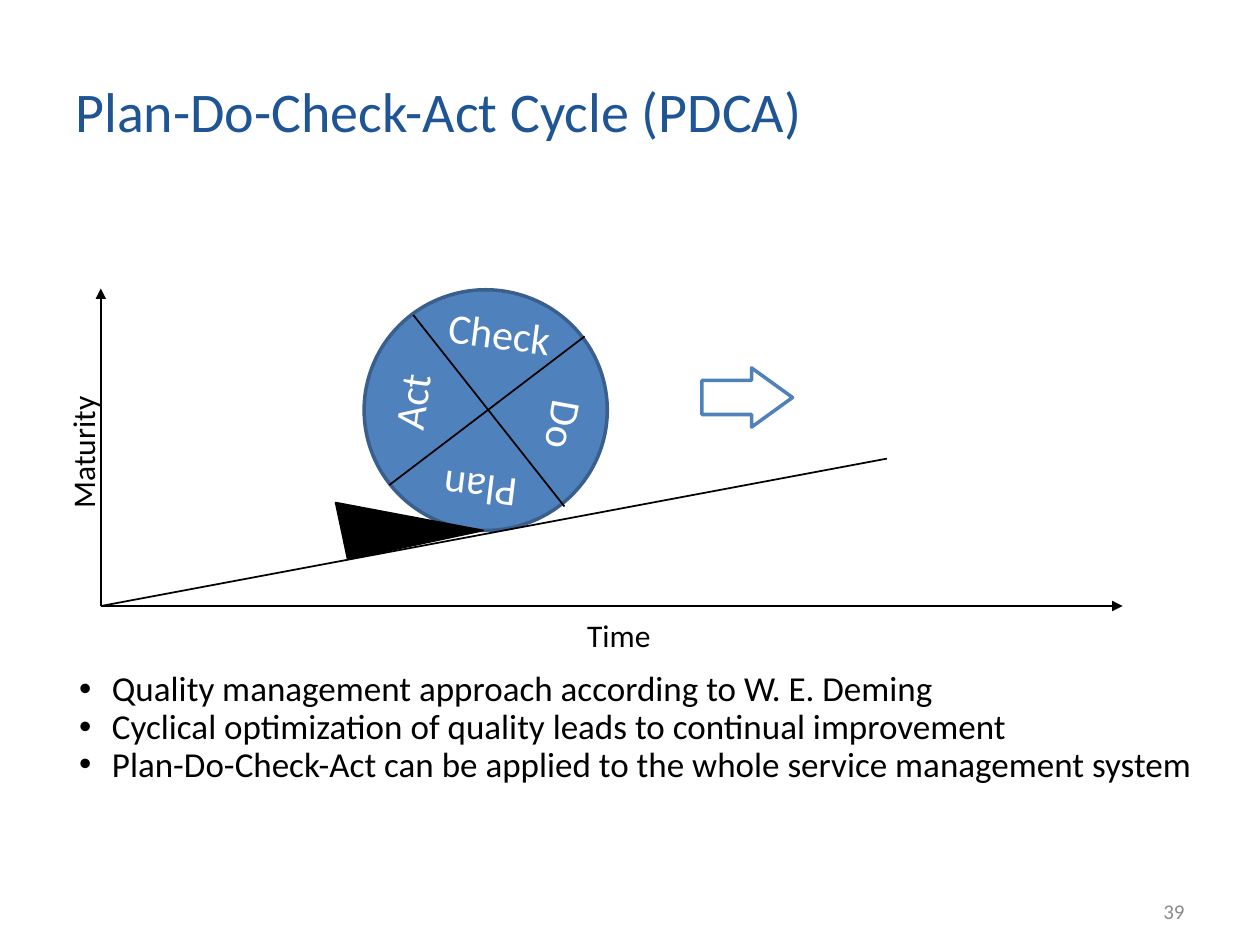
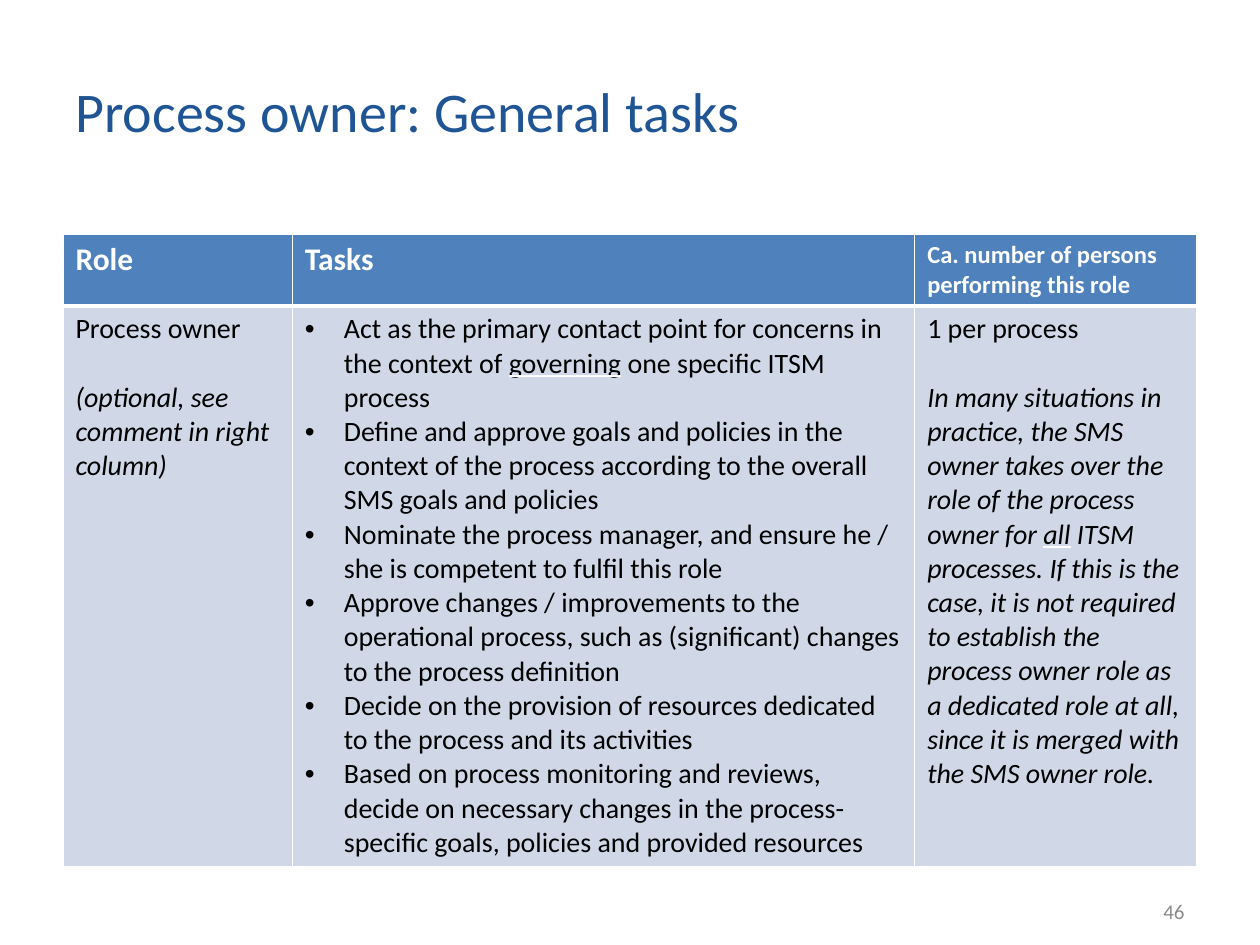
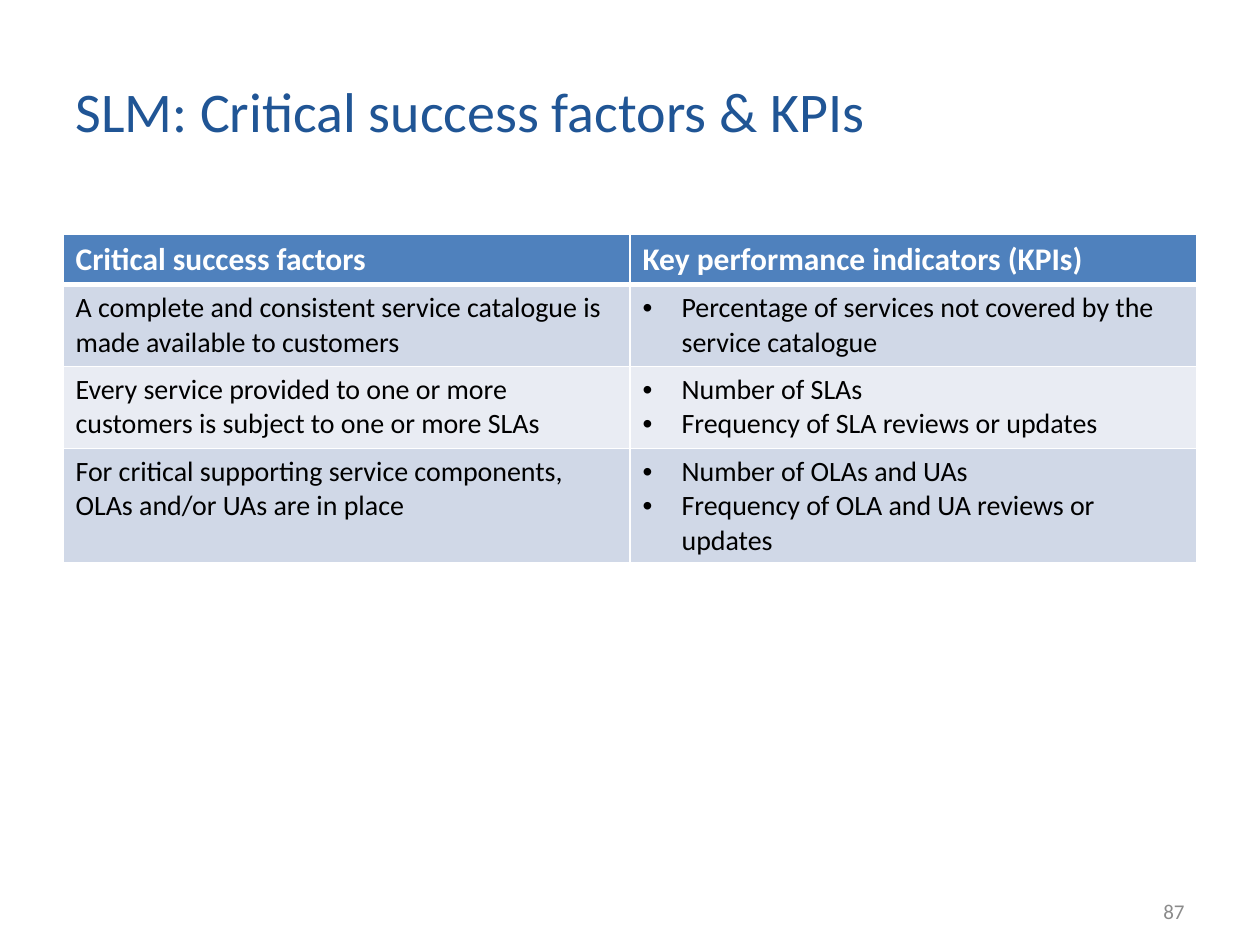
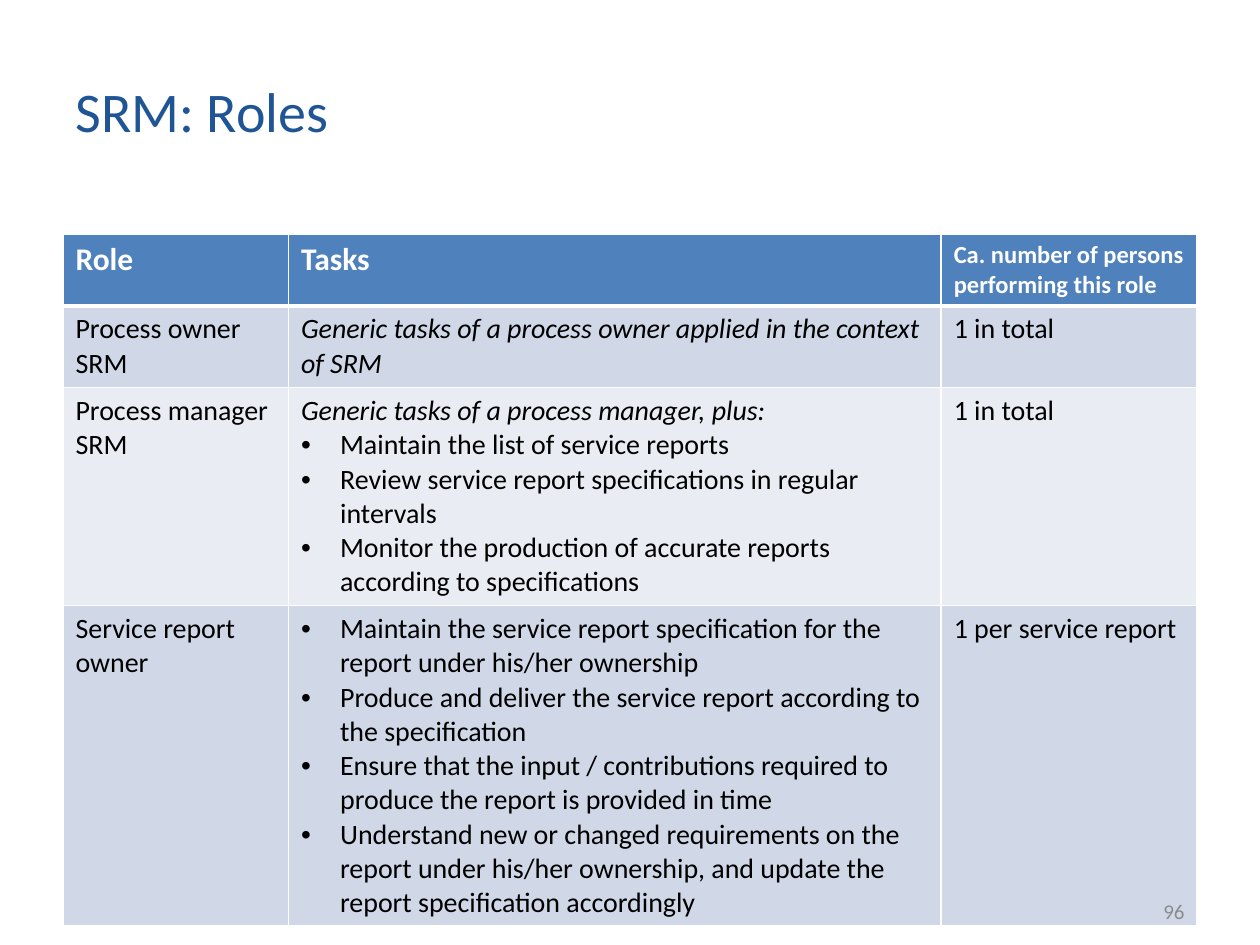
from dataclasses import dataclass

from lxml.etree import SubElement
from pptx import Presentation
from pptx.dml.color import RGBColor
from pptx.enum.shapes import MSO_CONNECTOR, MSO_SHAPE
from pptx.enum.text import MSO_ANCHOR, PP_ALIGN
from pptx.oxml import parse_xml
from pptx.oxml.ns import nsdecls, qn
from pptx.util import Inches, Pt

FONT = "Calibri"
TITLE_BLUE = RGBColor(0x20, 0x55, 0x95)
ACCENT = RGBColor(0x4F, 0x81, 0xBD)
WHEEL_EDGE = RGBColor(0x3A, 0x5F, 0x8C)
BAND_DARK = RGBColor(0xD0, 0xD8, 0xE7)
BAND_LIGHT = RGBColor(0xE9, 0xEC, 0xF3)
NUMBER_GREY = RGBColor(0x8B, 0x8B, 0x8B)
BLACK = RGBColor(0, 0, 0)
WHITE = RGBColor(255, 255, 255)

TITLE_BOX = (0.5, 0.3, 8.04, 1.15)
NUMBER_BOX = (7.17, 7.03, 2.33, 0.4)
TABLE_LEFT, TABLE_TOP = 0.5, 1.86
ROLE_HEADER = [("Role", 18), ("Tasks", 18), ("Ca. number of persons performing this role", 14)]


@dataclass
class Item:
    text: str
    bullet: bool = False
    italic: bool = False
    underlined: str = ""
    gap: float = 0


def bullets(*texts):
    return [Item(text, bullet=True) for text in texts]


def box(*lengths):
    return [Inches(length) for length in lengths]


def style(run, size, color, bold=False, italic=False):
    run.font.name = FONT
    run.font.size = Pt(size)
    run.font.color.rgb = color
    run.font.bold = bold
    run.font.italic = italic


def underline_white(run):
    run.font.underline = True
    line_fill = parse_xml(
        f'<a:uFill {nsdecls("a")}><a:solidFill><a:srgbClr val="{WHITE}"/></a:solidFill></a:uFill>'
    )
    run.font._element.find(qn("a:latin")).addprevious(line_fill)


def indent(paragraph, margin, hanging=0):
    properties = paragraph._p.get_or_add_pPr()
    properties.set("marL", str(Inches(margin)))
    properties.set("indent", str(-Inches(hanging)))
    return properties


def add_bullet(paragraph, margin, hanging):
    properties = indent(paragraph, margin, hanging)
    color = SubElement(properties, qn("a:buClr"))
    SubElement(color, qn("a:srgbClr"), val=str(BLACK))
    SubElement(properties, qn("a:buFont"), typeface="Arial")
    SubElement(properties, qn("a:buChar"), char="•")


def add_text(slide, place, text, size, color, insets=(0.1, 0.05, 0.1, 0.05), wrap=True,
             anchor=MSO_ANCHOR.TOP, align=PP_ALIGN.LEFT, rotation=0):
    label = slide.shapes.add_textbox(*box(*place))
    label.rotation = rotation
    frame = label.text_frame
    frame.margin_left, frame.margin_top, frame.margin_right, frame.margin_bottom = box(*insets)
    frame.word_wrap = wrap
    frame.vertical_anchor = anchor
    frame.text = text
    for paragraph in frame.paragraphs:
        paragraph.alignment = align
        for run in paragraph.runs:
            style(run, size, color)
    return frame


def add_line(slide, start, end, arrow=False):
    line = slide.shapes.add_connector(MSO_CONNECTOR.STRAIGHT, *box(*start, *end))
    line.line.color.rgb = BLACK
    line.line.width = Pt(1)
    if arrow:
        SubElement(line.line._get_or_add_ln(), qn("a:tailEnd"), type="triangle")
    SubElement(line._element.spPr, qn("a:effectLst"))


def add_outline(slide, preset, place, fill, edge, width):
    outline = slide.shapes.add_shape(preset, *box(*place))
    outline.shadow.inherit = False
    outline.fill.solid()
    outline.fill.fore_color.rgb = fill
    outline.line.color.rgb = edge
    outline.line.width = Pt(width)
    return outline


def add_page(deck, title):
    slide = deck.slides.add_slide(deck.slide_layouts[6])
    add_text(slide, TITLE_BOX, title, 32, TITLE_BLUE, anchor=MSO_ANCHOR.MIDDLE)
    return slide


def add_number(slide, number):
    add_text(slide, NUMBER_BOX, str(number), 12, NUMBER_GREY,
             anchor=MSO_ANCHOR.MIDDLE, align=PP_ALIGN.RIGHT)


def draw_wheel(slide, left, top):
    add_outline(slide, MSO_SHAPE.OVAL, (left, top, 1.93, 1.91), ACCENT, WHEEL_EDGE, 2)
    for (x1, y1), (x2, y2) in [((1.59, 1.72), (0.39, 0.2)), ((1.75, 0.37), (0.2, 1.55))]:
        add_line(slide, (left + x1, top + y1), (left + x2, top + y2))
    phases = [
        ("Plan", 0.58, 1.4, 0.67, 187),
        ("Do", 1.36, 0.88, 0.47, 100.2),
        ("Check", 0.63, 0.14, 0.9, 7.4),
        ("Act", 0.1, 0.68, 0.54, 278.1),
    ]
    for phase, x, y, width, rotation in phases:
        frame = add_text(slide, (left + x, top + y, width, 0.4), phase, 24, WHITE,
                         insets=(0, 0, 0.04, 0), wrap=False, rotation=rotation)
        indent(frame.paragraphs[0], 0.04)


def draw_maturity_chart(slide, left, top, width, height):
    origin = (left, top + height)
    draw_wheel(slide, left + 2.09, top + 0.01)
    add_line(slide, origin, (left + 6.24, top + 1.35))
    wedge = add_outline(slide, MSO_SHAPE.RIGHT_TRIANGLE,
                        (left + 1.9, top + 1.58, 1.1, 0.46), BLACK, BLACK, 1)
    wedge.rotation = 348
    direction = add_outline(slide, MSO_SHAPE.RIGHT_ARROW,
                            (left + 4.77, top + 0.63, 0.72, 0.47), WHITE, ACCENT, 2)
    direction.adjustments[0] = 0.576
    direction.adjustments[1] = 0.692
    add_line(slide, origin, (left + width, top + height), arrow=True)
    add_line(slide, origin, (left, top), arrow=True)
    axis_names = [("Maturity", -0.59, 1.15, 0.89, 270), ("Time", 3.86, height + 0.08, 0.55, 0)]
    for name, x, y, name_width, rotation in axis_names:
        add_text(slide, (left + x, top + y, name_width, 0.3), name, 18, BLACK,
                 insets=(0, 0, 0, 0), wrap=False, rotation=rotation)


def draw_summary(slide, place, points):
    frame = add_text(slide, place, "\n".join(points), 20, BLACK, insets=(0.1, 0.05, 0.13, 0.05))
    for paragraph in frame.paragraphs:
        paragraph.line_spacing = 0.9
        add_bullet(paragraph, 0.29, 0.26)


def paint_cell(cell, fill, bottom_width):
    cell.fill.solid()
    cell.fill.fore_color.rgb = fill
    edges = [("lnL", 0.96), ("lnR", 0.96), ("lnB", bottom_width)]
    for position, (edge, width) in enumerate(edges):
        border = parse_xml(
            f'<a:{edge} {nsdecls("a")} w="{Pt(width)}"><a:solidFill>'
            f'<a:srgbClr val="{WHITE}"/></a:solidFill></a:{edge}>'
        )
        cell._tc.get_or_add_tcPr().insert(position, border)


def fill_cell(cell, items, fill):
    paint_cell(cell, fill, 0.96)
    frame = cell.text_frame
    for index, item in enumerate(items):
        paragraph = frame.add_paragraph() if index else frame.paragraphs[0]
        if item.gap:
            paragraph.space_before = Pt(item.gap)
        if item.bullet:
            add_bullet(paragraph, 0.31, 0.31)
        before, marked, after = item.text, "", ""
        if item.underlined:
            before, marked, after = item.text.partition(f" {item.underlined} ")
            before, marked, after = before + " ", marked.strip(), " " + after
        for part in filter(None, (before, marked, after)):
            run = paragraph.add_run()
            run.text = part
            style(run, 16, BLACK, italic=item.italic)
            if part == marked:
                underline_white(run)


def draw_table(slide, left, top, widths, heights, header, rows):
    frame = slide.shapes.add_table(len(heights), len(widths),
                                   *box(left, top, sum(widths), sum(heights)))
    table = frame.table
    for column, width in zip(table.columns, widths):
        column.width = Inches(width)
    for row, height in zip(table.rows, heights):
        row.height = Inches(height)
    for cell, (heading, size) in zip(table.rows[0].cells, header):
        paint_cell(cell, ACCENT, 3)
        cell.text_frame.text = heading
        style(cell.text_frame.paragraphs[0].runs[0], size, WHITE, bold=True)
    for index, entries in enumerate(rows):
        band = BAND_LIGHT if index % 2 else BAND_DARK
        for cell, items in zip(table.rows[index + 1].cells, entries):
            fill_cell(cell, items, band)


def add_cycle_slide(deck):
    slide = add_page(deck, "Plan-Do-Check-Act Cycle (PDCA)")
    draw_maturity_chart(slide, 0.8, 2.29, 8.11, 2.52)
    draw_summary(slide, (0.5, 5.28, 9.19, 1.52), [
        "Quality management approach according to W. E. Deming",
        "Cyclical optimization of quality leads to continual improvement",
        "Plan-Do-Check-Act can be applied to the whole service management system",
    ])
    add_number(slide, 39)


def add_table_slide(deck, title, number, widths, heights, header, rows):
    slide = add_page(deck, title)
    draw_table(slide, TABLE_LEFT, TABLE_TOP, widths, heights, header, rows)
    add_number(slide, number)


OWNER_ROWS = [[
    [Item("Process owner"),
     Item("(optional, see comment in right column)", italic=True, gap=19.5)],
    [Item("Act as the primary contact point for concerns in the context of governing one "
          "specific ITSM process", bullet=True, underlined="governing")]
    + bullets(
        "Define and approve goals and policies in the context of the process according to "
        "the overall SMS goals and policies",
        "Nominate the process manager, and ensure he / she is competent to fulfil this role",
        "Approve changes / improvements to the operational process, such as (significant) "
        "changes to the process definition",
        "Decide on the provision of resources dedicated to the process and its activities",
        "Based on process monitoring and reviews, decide on necessary changes in the "
        "process-specific goals, policies and provided resources",
    ),
    [Item("1 per process"),
     Item("In many situations in practice, the SMS owner takes over the role of the process "
          "owner for all ITSM processes. If this is the case, it is not required to establish "
          "the process owner role as a dedicated role at all, since it is merged with the SMS "
          "owner role.", italic=True, underlined="all", gap=19.5)],
]]

FACTOR_ROWS = [
    [[Item("A complete and consistent service catalogue is made available to customers")],
     bullets("Percentage of services not covered by the service catalogue")],
    [[Item("Every service provided to one or more customers is subject to one or more SLAs")],
     bullets("Number of SLAs", "Frequency of SLA reviews or updates")],
    [[Item("For critical supporting service components, OLAs and/or UAs are in place")],
     bullets("Number of OLAs and UAs", "Frequency of OLA and UA reviews or updates")],
]

REPORTING_ROWS = [
    [[Item("Process owner SRM")],
     [Item("Generic tasks of a process owner applied in the context of SRM", italic=True)],
     [Item("1 in total")]],
    [[Item("Process manager SRM")],
     [Item("Generic tasks of a process manager, plus:", italic=True)]
     + bullets(
         "Maintain the list of service reports",
         "Review service report specifications in regular intervals",
         "Monitor the production of accurate reports according to specifications",
     ),
     [Item("1 in total")]],
    [[Item("Service report owner")],
     bullets(
         "Maintain the service report specification for the report under his/her ownership",
         "Produce and deliver the service report according to the specification",
         "Ensure that the input / contributions required to produce the report is provided "
         "in time",
         "Understand new or changed requirements on the report under his/her ownership, and "
         "update the report specification accordingly",
     ),
     [Item("1 per service report")]],
]


def main():
    deck = Presentation()
    deck.slide_width, deck.slide_height = box(10, 7.5)
    add_cycle_slide(deck)
    add_table_slide(deck, "Process owner: General tasks", 46,
                    [1.82, 4.94, 2.24], [0.56, 4.45], ROLE_HEADER, OWNER_ROWS)
    add_table_slide(deck, "SLM: Critical success factors & KPIs", 87,
                    [4.5, 4.5], [0.39, 0.65, 0.65, 0.91],
                    [("Critical success factors", 18), ("Key performance indicators (KPIs)", 18)],
                    FACTOR_ROWS)
    add_table_slide(deck, "SRM: Roles", 96,
                    [1.79, 5.18, 2.03], [0.56, 0.65, 1.73, 2.54], ROLE_HEADER, REPORTING_ROWS)
    deck.save("out.pptx")


if __name__ == "__main__":
    main()
